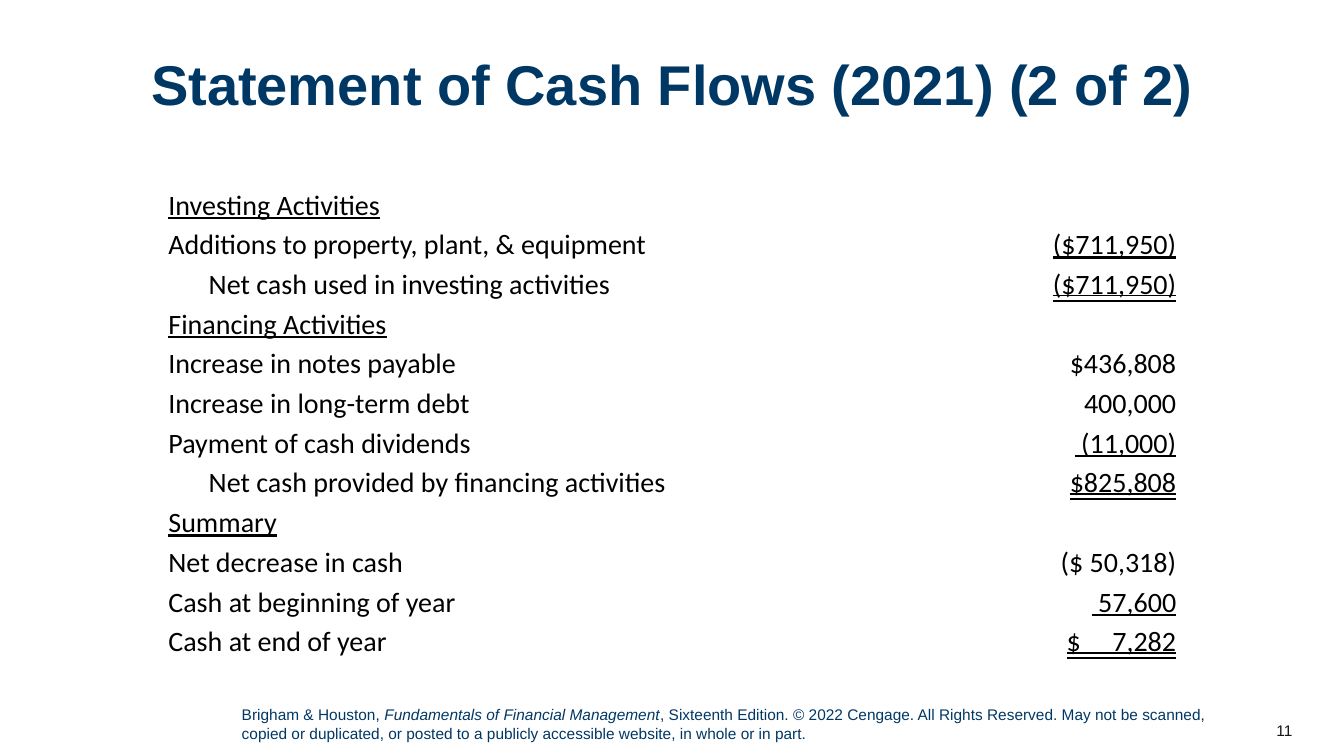
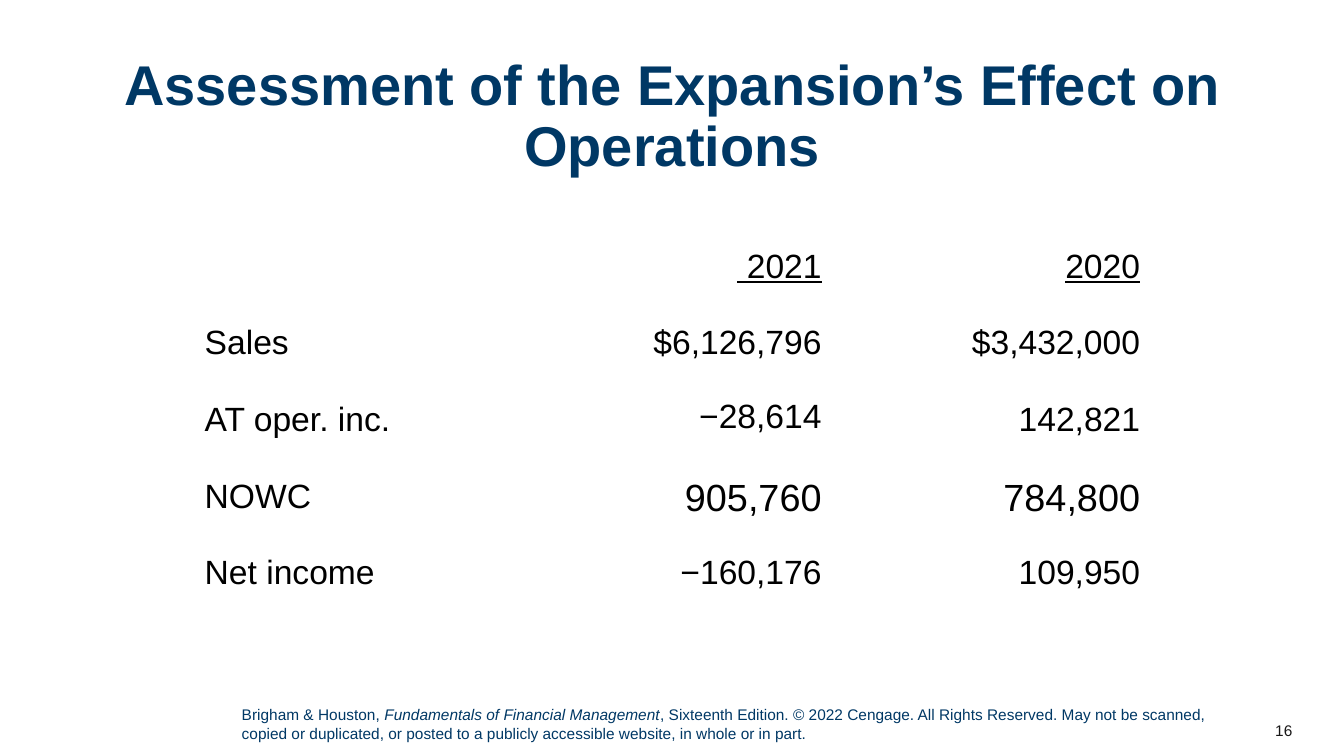
import pptx
import pptx.dml.color
import pptx.enum.text
import pptx.util

ALIGN = pptx.enum.text.PP_ALIGN
ANCHOR = pptx.enum.text.MSO_ANCHOR
UNDERLINE = pptx.enum.text.MSO_UNDERLINE

FOOTER = (
    ("Brigham & Houston, ", False),
    ("Fundamentals of Financial Management", True),
    (", Sixteenth Edition. © 2022 Cengage. All Rights Reserved. May not be scanned, "
     "copied or duplicated, or posted to a publicly accessible website, "
     "in whole or in part.", False),
)


def color(hex_string):
    return pptx.dml.color.RGBColor.from_string(hex_string)


class Deck:
    """Shared style and the current slide; lengths are percent of the slide size."""

    NAVY, INK, BLACK = "003865", "181717", "000000"
    FONT = "Arial"

    def __init__(self):
        self.prs = pptx.Presentation()
        self.prs.slide_width = pptx.util.Inches(13.33)
        self.prs.slide_height = pptx.util.Inches(7.5)
        self.s = None

    def x(self, share):
        return round(self.prs.slide_width * share / 100)

    def y(self, share):
        return round(self.prs.slide_height * share / 100)

    def box(self, left, top, width, height):
        return self.x(left), self.y(top), self.x(width), self.y(height)

    def style(self, r, size, hex_string, font=FONT, bold=False, italic=False,
              underline=None):
        r.font.name = font
        r.font.size = pptx.util.Pt(size)
        r.font.color.rgb = color(hex_string)
        r.font.bold = bold
        r.font.italic = italic
        r.font.underline = underline

    def text(self, area, runs, size, hex_string, align=ALIGN.LEFT,
             anchor=ANCHOR.TOP, spacing=None, bold=False):
        """Add a text box of one paragraph; runs are (text, italic) pairs."""
        sp = self.s.shapes.add_textbox(*self.box(*area))
        tf = sp.text_frame
        tf.word_wrap = True
        tf.vertical_anchor = anchor
        p = tf.paragraphs[0]
        p.alignment = align
        p.line_spacing = spacing
        for words, italic in runs:
            r = p.add_run()
            r.text = words
            self.style(r, size, hex_string, bold=bold, italic=italic)

    def slide(self, title, number):
        """Start a slide with its title, footer and page number."""
        self.s = self.prs.slides.add_slide(self.prs.slide_layouts[6])
        self.text((90.9, 94, 6, 5.33), [(str(number), False)], 11, self.INK,
                  ALIGN.RIGHT, ANCHOR.MIDDLE)
        self.text((17.25, 92.67, 73.5, 6.27), FOOTER, 11, self.NAVY)
        self.text((3.9, 6.93, 92.2, 17.7), [(title, False)], 40, self.NAVY,
                  ALIGN.CENTER, spacing=0.9, bold=True)

    def table(self, left, top, widths, row_height, rows, size, font=FONT, inset=0.05):
        """Add a plain table; a cell is a text or a (text, options) pair."""
        area = self.box(left, top, sum(widths), row_height * len(rows))
        table = self.s.shapes.add_table(len(rows), len(widths), *area).table
        table.first_row = table.horz_banding = False
        for column, width in zip(table.columns, widths):
            column.width = self.x(width)
        for i, row in enumerate(rows):
            table.rows[i].height = self.y(row_height)
            for j, content in enumerate(row):
                words, options = content if isinstance(content, tuple) else (content, {})
                cell = table.cell(i, j)
                cell.margin_top = cell.margin_bottom = pptx.util.Inches(inset)
                self.cell(cell, words, ALIGN.RIGHT if j else ALIGN.LEFT,
                          **{"size": size, "font": font, **options})

    def cell(self, cell, words, align, size, font, underline=None, indent=0,
             spacing=None):
        cell.fill.background()
        p = cell.text_frame.paragraphs[0]
        p.text = words
        p.alignment = align
        p.line_spacing = spacing
        if indent:
            p._p.get_or_add_pPr().set("marL", str(pptx.util.Inches(indent)))
        for r in p.runs:
            self.style(r, size, self.BLACK, font, underline=underline)


def single(words):
    return words, {"underline": True}


def double(words):
    return words, {"underline": UNDERLINE.DOUBLE_LINE}


def subtotal(words):
    return words, {"indent": 0.4}


def main():
    deck = Deck()

    deck.slide("Statement of Cash Flows (2021) (2 of 2)", 11)
    cash_flows = [
        (single("Investing Activities"), ""),
        ("Additions to property, plant, & equipment", single("($711,950)")),
        (subtotal("Net cash used in investing activities"), double("($711,950)")),
        (single("Financing Activities"), ""),
        ("Increase in notes payable", "$436,808"),
        ("Increase in long-term debt", "400,000"),
        ("Payment of cash dividends", single(" (11,000)")),
        (subtotal("Net cash provided by financing activities"), double("$825,808")),
        (single("Summary"), ""),
        ("Net decrease in cash", "($ 50,318)"),
        ("Cash at beginning of year", single(" 57,600")),
        ("Cash at end of year", double("$     7,282")),
    ]
    deck.table(11.78, 24.53, (61.5, 15), 5.25, cash_flows, 20, "Calibri", 0.03)

    deck.slide("Assessment of the Expansion’s Effect on Operations", 16)
    large = {"size": 27}
    operations = [
        ("", single(" 2021"), single("2020")),
        ("Sales", "$6,126,796", "$3,432,000"),
        ("AT oper. inc.", ("−28,614", {"spacing": 0.9}), "142,821"),
        ("NOWC", ("905,760", large), ("784,800", large)),
        ("Net income", "−160,176", "109,950"),
    ]
    deck.table(14.48, 32.13, (23.7,) * 3, 10.13, operations, 24)

    deck.prs.save("out.pptx")


if __name__ == "__main__":
    main()
